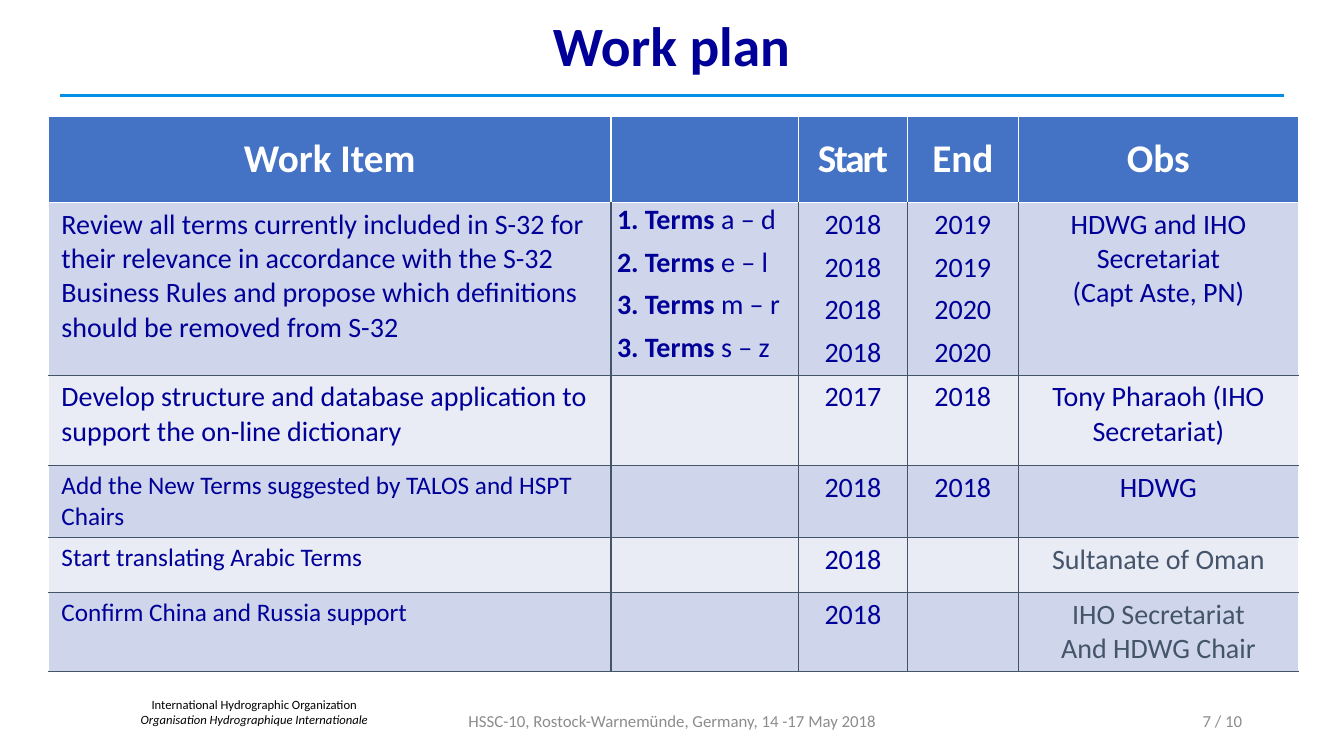
"""Build the work plan slide: a title, a table of work items and a footer."""
from lxml import etree
from pptx import Presentation
from pptx.dml.color import RGBColor
from pptx.enum.shapes import MSO_CONNECTOR
from pptx.enum.text import MSO_ANCHOR, PP_ALIGN
from pptx.oxml.ns import qn
from pptx.util import Inches, Pt

LEFT, CENTER, RIGHT = PP_ALIGN.LEFT, PP_ALIGN.CENTER, PP_ALIGN.RIGHT
MIDDLE, TOP = MSO_ANCHOR.MIDDLE, MSO_ANCHOR.TOP
STRAIGHT = MSO_CONNECTOR.STRAIGHT
NAVY, SLATE, WHITE, GREY = "000099", "44546A", "FFFFFF", "8C8C8C"
HEADER_FILL, BANDS = "4472C4", ("CFD5EA", "E9EBF5")
TITLE_ONLY = 5


def rgb(color):
    return RGBColor.from_string(color)


def add_run(paragraph, text, size, color, bold=False, italic=False):
    run = paragraph.add_run()
    run.text = text
    run.font.name = "Calibri"
    run.font.size = Pt(size)
    run.font.color.rgb = rgb(color)
    run.font.bold = bold
    run.font.italic = italic
    return run


prs = Presentation()
prs.slide_width, prs.slide_height = Inches(13.33), Inches(7.5)
slide = prs.slides.add_slide(prs.slide_layouts[TITLE_ONLY])

title = slide.shapes.title
title.left, title.top = Inches(1.75), Inches(0.22)
title.width, title.height = Inches(9.82), Inches(0.52)
title.text_frame.vertical_anchor = MIDDLE
heading = title.text_frame.paragraphs[0]
heading.alignment = CENTER
heading.line_spacing = 0.9
add_run(heading, "Work plan", 39.6, NAVY, bold=True)

column_widths = [5.58, 1.86, 1.08, 1.1, 2.78]
row_heights = [0.86, 1.71, 0.9, 0.71, 0.55, 0.78]
work_items = [
    ["Work Item", "", "Start", "End", "Obs"],
    ["Review all terms currently included in S-32 for their relevance in accordance with "
     "the S-32 Business Rules and propose which definitions should be removed from S-32",
     "1. Terms |a – d\n2. Terms |e – l\n3. Terms |m – r\n3. Terms |s – z",
     "2018\n2018\n2018\n2018", "2019\n2019\n2020\n2020",
     "HDWG and IHO Secretariat\n(Capt Aste, PN)"],
    ["Develop structure and database application to support the on-line dictionary",
     "", "2017", "2018", "Tony Pharaoh (IHO Secretariat)"],
    ["Add the New Terms suggested by TALOS and HSPT Chairs", "", "2018", "2018", "HDWG"],
    ["Start translating Arabic Terms", "", "2018", "", "Sultanate of Oman"],
    ["Confirm China and Russia support", "", "2018", "", "IHO Secretariat\nAnd HDWG Chair"],
]
last_col = len(column_widths) - 1

plan = slide.shapes.add_table(
    len(row_heights), len(column_widths), Inches(0.48), Inches(1.15),
    Inches(sum(column_widths)), Inches(sum(row_heights))).table
for column, width in zip(plan.columns, column_widths):
    column.width = Inches(width)
for row, height in zip(plan.rows, row_heights):
    row.height = Inches(height)

for r, item in enumerate(work_items):
    is_header = r == 0
    for c, content in enumerate(item):
        cell = plan.cell(r, c)
        is_terms = r == 1 and c == 1
        cell.fill.solid()
        cell.fill.fore_color.rgb = rgb(HEADER_FILL if is_header else BANDS[(r - 1) % 2])
        cell.vertical_anchor = MIDDLE if is_header else TOP
        cell.margin_left = cell.margin_right = Inches(0.06 if is_terms else 0.13)
        cell.margin_top = cell.margin_bottom = Inches(0 if is_terms else 0.05)

        edges = {"a:lnL": is_header or c == 0, "a:lnR": is_header or c == last_col,
                 "a:lnT": r <= 1, "a:lnB": is_header}
        for position, (tag, is_white) in enumerate(edges.items()):
            edge = etree.Element(qn(tag), w=str(Pt(1)))
            line_fill = etree.SubElement(edge, qn("a:solidFill"))
            etree.SubElement(line_fill, qn("a:srgbClr"), val=WHITE if is_white else SLATE)
            cell._tc.get_or_add_tcPr().insert(position, edge)

        if not content:
            continue
        size = 28 if is_header else 18 if c == 0 and r >= 3 else 20
        color = WHITE if is_header else SLATE if c == last_col and r >= 4 else NAVY
        for i, line in enumerate(content.split("\n")):
            frame = cell.text_frame
            paragraph = frame.add_paragraph() if i else frame.paragraphs[0]
            paragraph.alignment = CENTER if is_header or c >= 2 else LEFT
            if r == 1 and 1 <= c <= 3:
                paragraph.space_after = Pt(6)
            label, _, value = line.rpartition("|")
            if label:
                add_run(paragraph, label, size, color, bold=True)
            run = add_run(paragraph, value, size, color, bold=is_header)
            if content == "Start":
                run.font._element.set("spc", "-150")

rule = slide.shapes.add_connector(
    STRAIGHT, Inches(0.6), Inches(0.95), Inches(12.73), Inches(0.95))
rule.line.color.rgb = rgb("0090E5")
rule.line.width = Pt(2.25)
etree.SubElement(rule._element.spPr, qn("a:effectLst"))

organization = [("International Hydrographic Organization", False),
                ("Organisation Hydrographique Internationale", True)]
meeting = [("HSSC-10, Rostock-Warnemünde, Germany, 14 -17 May 2018", False)]
page = [("7 / 10", False)]
footers = [
    (0.27, 6.86, 4.5, 0.07, 0.04, CENTER, 9, "000000", organization),
    (4.42, 6.95, 4.5, 0.1, 0.05, CENTER, 12, GREY, meeting),
    (9.42, 6.95, 3, 0.1, 0.05, RIGHT, 12, GREY, page),
]
for left, top, width, side, edge, alignment, size, color, lines in footers:
    footer = slide.shapes.add_textbox(
        Inches(left), Inches(top), Inches(width), Inches(0.4)).text_frame
    footer.word_wrap = True
    footer.vertical_anchor = MIDDLE
    footer.margin_left = footer.margin_right = Inches(side)
    footer.margin_top = footer.margin_bottom = Inches(edge)
    paragraph = footer.paragraphs[0]
    paragraph.alignment = alignment
    for i, (text, italic) in enumerate(lines):
        if i:
            paragraph.add_line_break()
        add_run(paragraph, text, size, color, italic=italic)

prs.save("out.pptx")
